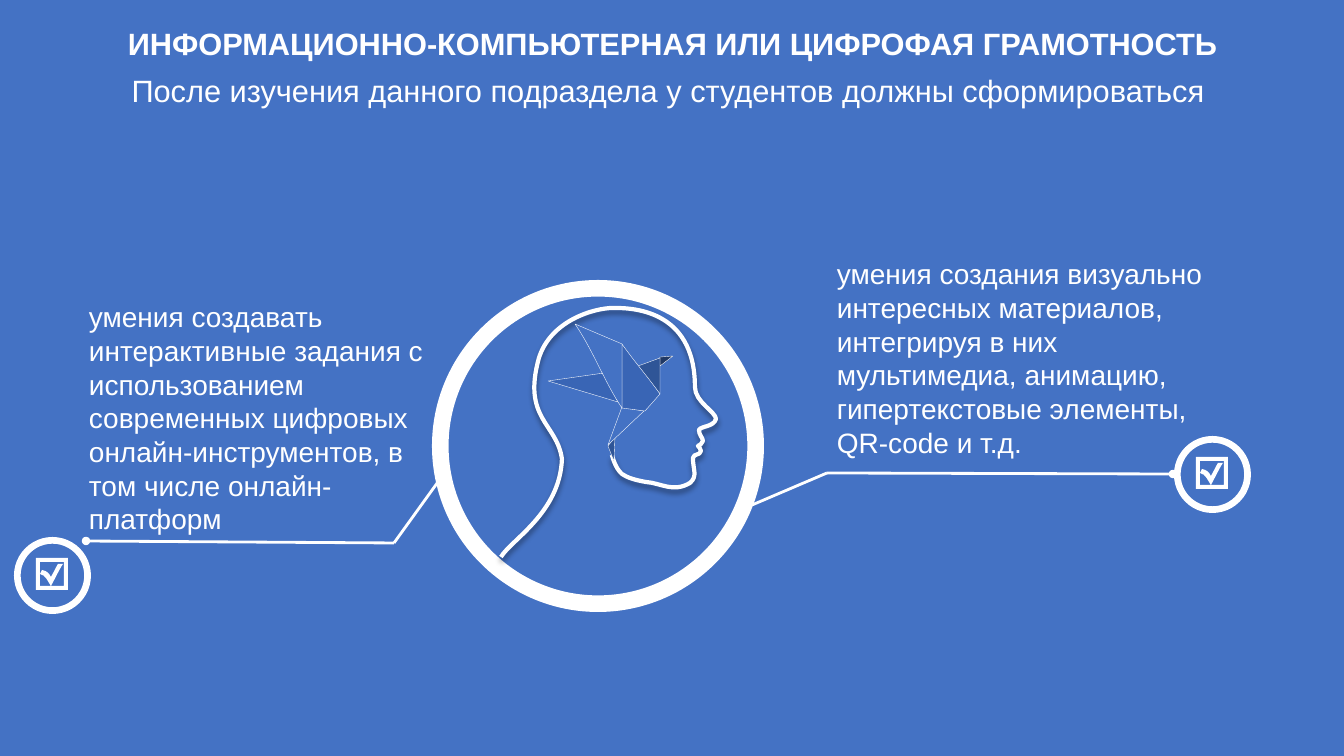
from dataclasses import dataclass
from math import cos, radians, sin

from lxml.etree import SubElement
from pptx import Presentation
from pptx.dml.color import RGBColor
from pptx.enum.shapes import MSO_CONNECTOR, MSO_SHAPE
from pptx.enum.text import MSO_ANCHOR, MSO_AUTO_SIZE, PP_ALIGN
from pptx.oxml.ns import qn
from pptx.util import Pt

SLIDE_W, SLIDE_H = 1344, 756
SCALE = 12192000 / SLIDE_W  # EMU per px
BIRD_TILT = 325.7


@dataclass(frozen=True)
class Theme:
    font: str = "Arial"
    title_size: int = 22
    body_size: int = 20
    white: str = "FFFFFF"
    background: str = "4472C4"
    wing: str = "3965B5"
    shade: str = "2F5597"
    beak: str = "203864"


THEME = Theme()

# Outlines in px: a pair is a straight step, six numbers are a cubic curve
FRAME = [(0, 0), (32, 0), (32, 32), (0, 32)]
TICK = [(4, 4), (4, 28), (15, 28), (12, 24, 10, 17, 4, 16), (6, 12),
        (11, 13, 13, 15, 15, 19), (18, 14, 19, 11, 22, 6), (27, 6),
        (23, 12, 19, 21, 15, 28), (28, 28), (28, 4)]
HEAD = [(180, 175), (180, 175, 183, 188, 190, 194), (196, 198, 203, 200, 214, 202),
        (229, 203, 241, 213, 258, 203), (266, 196, 261, 190, 261, 178),
        (262, 173, 268, 176, 269, 171), (269, 168, 267, 168, 266, 166),
        (268, 165, 270, 164, 271, 161), (271, 158, 267, 155, 267, 150),
        (269, 146, 282, 147, 284, 139), (284, 132, 263, 122, 263, 107),
        (263, 27, 196, 28, 181, 28), (163, 28, 119, 40, 107, 78),
        (90, 139, 125, 143, 130, 179), (128, 233, 79, 260, 69, 277)]
BIRD = [
    (THEME.shade, [(183, 157), (182, 181), (176, 166)]),
    (THEME.background, [(176, 165), (190, 127), (212, 131)]),
    (THEME.beak, [(228, 77), (241, 76), (228, 86)]),
    (THEME.shade, [(206, 86), (228, 78), (228, 114)]),
    (THEME.wing, [(116, 101), (172, 93), (186, 122)]),
    (THEME.wing, [(213, 131), (228, 114), (216, 97, 202, 81, 190, 64), (190, 128)]),
    (THEME.background, [(190, 64), (143, 44), (161, 70, 173, 103, 190, 128)]),
]


def px(n):
    return round(n * SCALE)


def rgb(color):
    return RGBColor.from_string(color)


def paint(sp, fill=None, line=None, width=0):
    sp.shadow.inherit = False
    if fill:
        sp.fill.solid()
        sp.fill.fore_color.rgb = rgb(fill)
    else:
        sp.fill.background()
    if line:
        sp.line.color.rgb = rgb(line)
        sp.line.width = Pt(width)
    else:
        sp.line.fill.background()
    return sp


def turn(point, pivot, degrees):
    c, s = cos(radians(degrees)), sin(radians(degrees))
    dx, dy = point[0] - pivot[0], point[1] - pivot[1]
    return round(pivot[0] + dx * c - dy * s), round(pivot[1] + dx * s + dy * c)


def bend(sp, outlines):
    """Join the three points of each curved step into one cubic segment."""
    segments = sp.element.iter(qn("a:lnTo"))
    segments = iter(list(segments))
    for outline in outlines:
        for step in outline[1:]:
            segment = next(segments)
            if len(step) == 6:
                segment.tag = qn("a:cubicBezTo")
                for extra in (next(segments), next(segments)):
                    segment.append(extra[0])
                    extra.getparent().remove(extra)


def add_outline(shapes, x, y, outlines, close=True, tilt=0, **look):
    pivot = px(x + outlines[0][0][0]), px(y + outlines[0][0][1])
    builder = None
    for outline in outlines:
        first, *rest = [turn((px(x + step[i]), px(y + step[i + 1])), pivot, -tilt)
                        for step in outline for i in range(0, len(step), 2)]
        if builder is None:
            builder = shapes.build_freeform(*first)
        else:
            builder.move_to(*first)
        builder.add_line_segments(rest, close=close)
    sp = builder.convert_to_shape()
    bend(sp, outlines)
    if tilt:
        half_w, half_h = sp.width // 2, sp.height // 2
        cx, cy = turn((sp.left + half_w, sp.top + half_h), pivot, tilt)
        sp.left, sp.top, sp.rotation = cx - half_w, cy - half_h, tilt
    return paint(sp, **look)


def add_ring(shapes, x, y, size, thickness):
    sp = shapes.add_shape(MSO_SHAPE.DONUT, px(x), px(y), px(size), px(size))
    sp.adjustments[0] = thickness
    paint(sp, fill=THEME.white)


def add_line(shapes, start, end, dot=False):
    sp = shapes.add_connector(MSO_CONNECTOR.STRAIGHT, *map(px, start + end))
    sp.line.color.rgb = rgb(THEME.white)
    sp.line.width = Pt(2)
    sp_pr = sp.element.spPr
    if dot:
        SubElement(sp_pr.find(qn("a:ln")), qn("a:headEnd"), type="oval")
    SubElement(sp_pr, qn("a:effectLst"))


def add_text(shapes, box, lines, size=THEME.body_size, bold_first=False, align=None,
             anchor=MSO_ANCHOR.TOP, spacing=None, before=None, grow=True):
    tf = shapes.add_textbox(*map(px, box)).text_frame
    tf.word_wrap = True
    tf.auto_size = MSO_AUTO_SIZE.SHAPE_TO_FIT_TEXT if grow else MSO_AUTO_SIZE.NONE
    tf.vertical_anchor = anchor
    for i, line in enumerate(lines):
        p = tf.add_paragraph() if i else tf.paragraphs[0]
        p.alignment, p.line_spacing, p.space_before = align, spacing, before
        r = p.add_run()
        r.text = line
        r.font.name, r.font.size = THEME.font, Pt(size)
        r.font.bold = bold_first and i == 0
        r.font.color.rgb = rgb(THEME.white)


def add_heading(shapes, box):
    add_text(shapes, box, [
        "ИНФОРМАЦИОННО-КОМПЬЮТЕРНАЯ ИЛИ ЦИФРОФАЯ ГРАМОТНОСТЬ",
        "После изучения данного подраздела у студентов должны сформироваться ",
    ], size=THEME.title_size, bold_first=True, align=PP_ALIGN.CENTER,
        anchor=MSO_ANCHOR.MIDDLE, spacing=0.9, before=Pt(10), grow=False)


def add_callout(shapes, origin, text, text_box, badge, dot, elbow, ring):
    """Text over a bent leader line that joins a tick badge to the emblem."""
    x, y = origin
    dot, elbow, ring, badge = [(x + a, y + b) for a, b in (dot, elbow, ring, badge)]
    add_line(shapes, dot, elbow, dot=True)
    add_line(shapes, elbow, ring)
    # Tick badge
    add_ring(shapes, *badge, 77, 0.087)
    add_outline(shapes, badge[0] + 22, badge[1] + 21, [TICK, FRAME], fill=THEME.white)
    left, top, width, height = text_box
    add_text(shapes, (x + left, y + top, width, height), [text])


def add_emblem(shapes, x, y, size):
    """Ring with a head outline and a folded-paper bird."""
    group = shapes.add_group_shape().shapes
    add_ring(group, x, y, size, 0.05)
    # Head outline with a soft shadow
    sp = add_outline(group, x, y, [HEAD], close=False, line=THEME.white, width=3)
    effects = sp.element.spPr.find(qn("a:effectLst"))
    shadow = SubElement(effects, qn("a:outerShdw"), blurRad=str(Pt(4)),
                        dist=str(Pt(3)), dir="5400000", rotWithShape="0")
    color = SubElement(shadow, qn("a:srgbClr"), val="000000")
    SubElement(color, qn("a:alpha"), val="40000")
    # Bird facets
    for fill, facet in BIRD:
        add_outline(group, x, y, [facet], tilt=BIRD_TILT,
                    fill=fill, line=THEME.white, width=0.25)


def main():
    prs = Presentation()
    prs.slide_width, prs.slide_height = px(SLIDE_W), px(SLIDE_H)
    slide = prs.slides.add_slide(prs.slide_layouts[6])
    slide.background.fill.solid()
    slide.background.fill.fore_color.rgb = rgb(THEME.background)
    shapes = slide.shapes
    add_heading(shapes, (29, 9, 1287, 120))
    add_callout(shapes, (14, 294),
                "умения создавать интерактивные задания с использованием современных "
                "цифровых онлайн-инструментов, в том числе онлайн-платформ",
                text_box=(65, 1, 360, 248), badge=(0, 243),
                dot=(72, 247), elbow=(380, 249), ring=(429, 181))
    add_callout(shapes, (752, 252),
                "умения создания визуально интересных материалов, интегрируя в них "
                "мультимедиа, анимацию, гипертекстовые элементы, QR-code и т.д.",
                text_box=(75, 0, 389, 214), badge=(422, 184),
                dot=(421, 222), elbow=(75, 221), ring=(0, 253))
    add_emblem(shapes, 432, 280, 332)
    prs.save("out.pptx")


if __name__ == "__main__":
    main()
